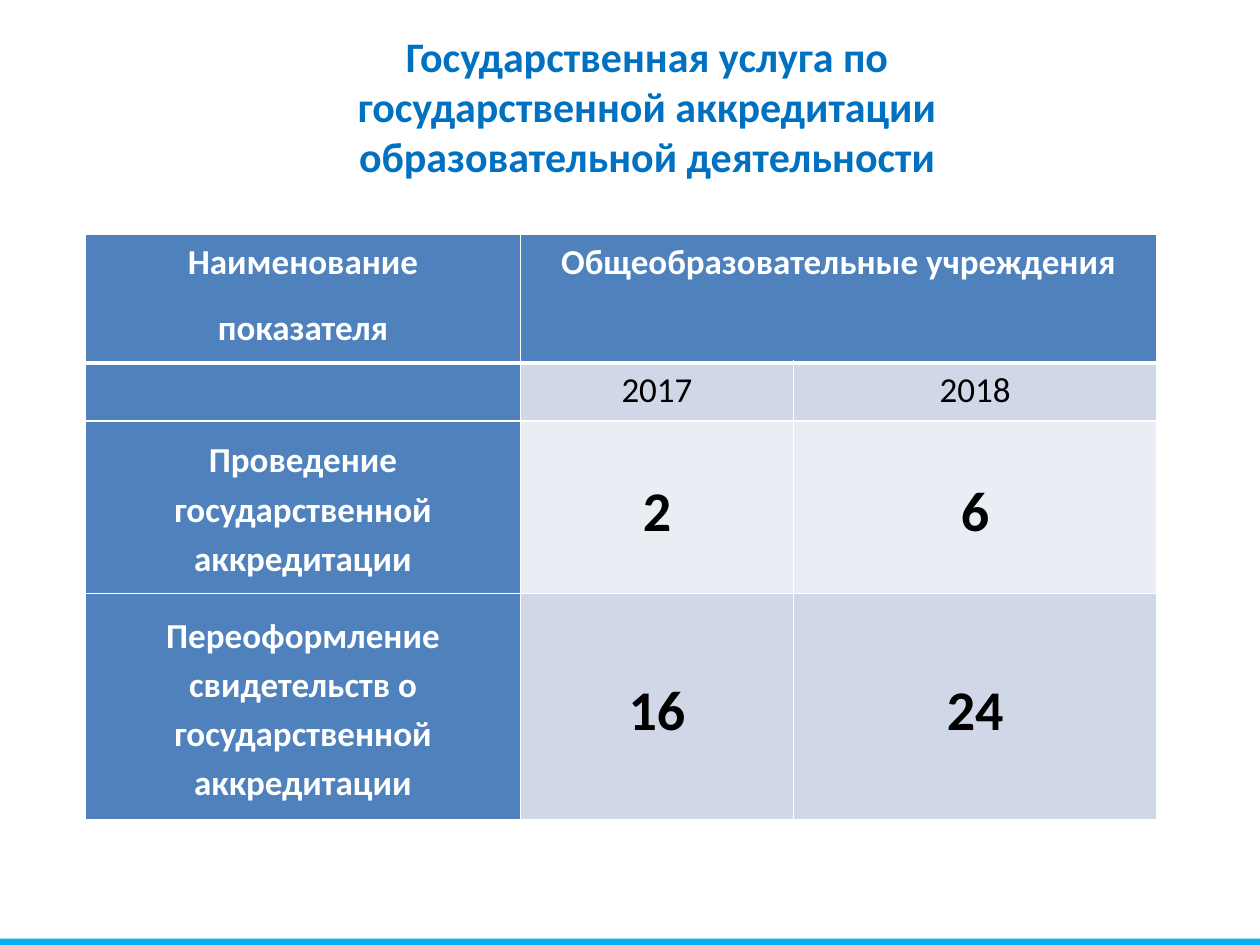
from dataclasses import dataclass

from lxml import etree
from pptx import Presentation
from pptx.dml.color import RGBColor
from pptx.enum.shapes import MSO_SHAPE
from pptx.enum.text import MSO_ANCHOR, PP_ALIGN
from pptx.oxml.ns import qn
from pptx.util import Inches, Pt

CENTER = PP_ALIGN.CENTER
TOP, MIDDLE = MSO_ANCHOR.TOP, MSO_ANCHOR.MIDDLE
RECTANGLE = MSO_SHAPE.RECTANGLE
FONT = "Calibri"
WHITE, BLACK, BLUE = "FFFFFF", "000000", "4F81BD"
BAND_DARK, BAND_LIGHT = "D0D8E8", "E9EDF4"
COLUMN_WIDTHS = (3.45, 2.17, 2.88)
ROW_HEIGHTS = (1.02, 0.46, 1.37, 1.8)


@dataclass(frozen=True)
class CellStyle:
    """Look of one kind of table cell."""
    fill: str
    color: str = WHITE
    size: int = 20
    bold: bool = True
    anchor: MSO_ANCHOR = MIDDLE


HEADER = CellStyle(BLUE, anchor=TOP)
LABEL = CellStyle(BLUE)
YEAR = CellStyle(BAND_DARK, BLACK, bold=False, anchor=TOP)
LIGHT_VALUE = CellStyle(BAND_LIGHT, BLACK, 32)
DARK_VALUE = CellStyle(BAND_DARK, BLACK, 32)

ROWS = (
    (("Наименование\nпоказателя", "Общеобразовательные учреждения", ""), (HEADER, HEADER, HEADER)),
    (("", "2017", "2018"), (HEADER, YEAR, YEAR)),
    (("Проведение государственной аккредитации", "2", "6"), (LABEL, LIGHT_VALUE, LIGHT_VALUE)),
    (("Переоформление свидетельств о государственной аккредитации", "16", "24"),
     (LABEL, DARK_VALUE, DARK_VALUE)),
)


def rgb(value: str) -> RGBColor:
    """Turn a hex string into a colour."""
    return RGBColor.from_string(value)


def format_paragraph(para, size: int, color: str, bold: bool) -> None:
    """Centre a paragraph and set the font of its runs."""
    para.alignment = CENTER
    for span in para.runs:
        span.font.name = FONT
        span.font.size = Pt(size)
        span.font.bold = bold
        span.font.color.rgb = rgb(color)


def add_border(cell, side: str, width: float, position: int) -> None:
    """Draw a white line on one side of a cell."""
    line = etree.Element(qn(f"a:{side}"), w=str(Pt(width)))
    fill = etree.SubElement(line, qn("a:solidFill"))
    etree.SubElement(fill, qn("a:srgbClr"), val=WHITE)
    cell._tc.get_or_add_tcPr().insert(position, line)


def fill_cell(cell, text: str, style: CellStyle, top: float, bottom: float) -> None:
    """Write and style one table cell."""
    cell.fill.solid()
    cell.fill.fore_color.rgb = rgb(style.fill)
    widths = {"lnL": 1, "lnR": 1, "lnT": top, "lnB": bottom}
    for position, (side, width) in enumerate(widths.items()):
        add_border(cell, side, width, position)
    cell.vertical_anchor = style.anchor
    if not text:
        return
    cell.margin_left = cell.margin_right = Inches(0.07)
    cell.margin_top = cell.margin_bottom = Inches(0)
    cell.text_frame.text = text
    for para in cell.text_frame.paragraphs:
        para.line_spacing = 1.15
        para.space_after = Pt(10)
        format_paragraph(para, style.size, style.color, style.bold)


def add_footer_bar(page) -> None:
    """Add the thin bar along the bottom edge."""
    bar = page.shapes.add_shape(RECTANGLE, Inches(0), Inches(7.45), Inches(10), Inches(0.05))
    bar.shadow.inherit = False
    bar.fill.solid()
    bar.fill.fore_color.rgb = rgb("00B0F0")
    bar.line.fill.background()


def add_title(page) -> None:
    """Add the slide heading."""
    box = page.shapes.add_textbox(Inches(1.46), Inches(0.19), Inches(6.85), Inches(1.31))
    frame = box.text_frame
    frame.word_wrap = True
    frame.margin_left = Inches(0.6)
    frame.text = "Государственная услуга по государственной аккредитации образовательной деятельности"
    format_paragraph(frame.paragraphs[0], 24, "0070C0", True)


def add_indicator_table(page) -> None:
    """Add the table of accreditation figures by year."""
    frame = page.shapes.add_table(
        len(ROW_HEIGHTS), len(COLUMN_WIDTHS), Inches(0.68), Inches(1.86),
        Inches(sum(COLUMN_WIDTHS)), Inches(sum(ROW_HEIGHTS)))
    table = frame.table
    table.horz_banding = False
    for column, width in zip(table.columns, COLUMN_WIDTHS):
        column.width = Inches(width)
    for row, height in zip(table.rows, ROW_HEIGHTS):
        row.height = Inches(height)
    table.cell(0, 1).merge(table.cell(0, 2))
    for row_index, (texts, styles) in enumerate(ROWS):
        top = 3 if row_index == 1 else 1
        bottom = 3 if row_index == 0 else 1
        for column_index, (text, style) in enumerate(zip(texts, styles)):
            fill_cell(table.cell(row_index, column_index), text, style, top, bottom)


def main() -> None:
    """Build the slide and save it."""
    deck = Presentation()
    deck.slide_width, deck.slide_height = Inches(10), Inches(7.5)
    page = deck.slides.add_slide(deck.slide_layouts[6])
    add_footer_bar(page)
    add_title(page)
    add_indicator_table(page)
    deck.save("out.pptx")


if __name__ == "__main__":
    main()
